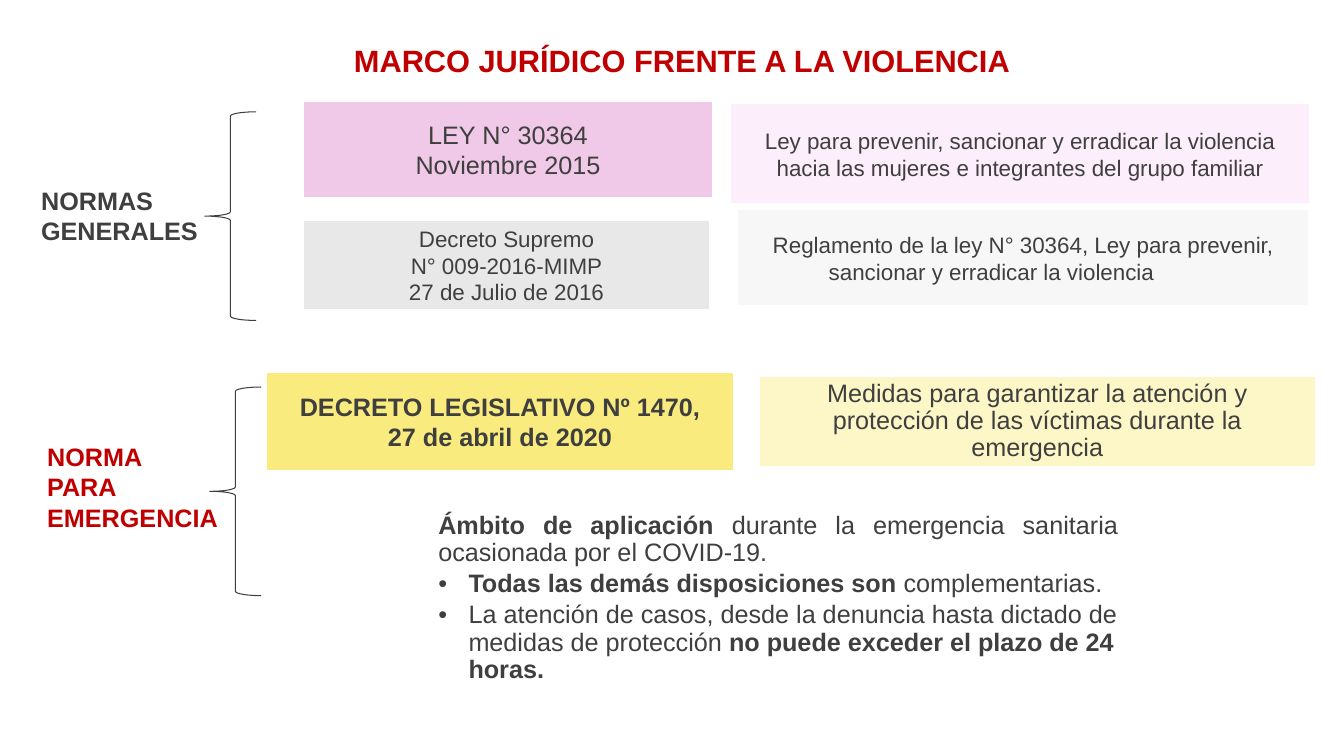
from lxml.etree import SubElement
from pptx import Presentation
from pptx.dml.color import RGBColor
from pptx.enum.shapes import MSO_SHAPE as Shape
from pptx.enum.text import MSO_ANCHOR as Anchor, MSO_AUTO_SIZE as AutoSize, PP_ALIGN as Align
from pptx.oxml.ns import qn
from pptx.util import Pt

DARK, RED, WHITE = "3F3F3F", "C00000", "FFFFFF"


def color(value):
    """Turn a hex string into a colour."""
    return RGBColor.from_string(value)


def write(frame, paragraphs, size=18, ink=DARK, bold=False, align=Align.LEFT,
          spacing=1.0, after=0, margin=0, indent=0, bullet=None, start=True):
    """Write paragraphs, each a string or a list of (text, bold) spans."""
    for index, content in enumerate(paragraphs):
        first = start and index == 0
        para = frame.paragraphs[0] if first else frame.add_paragraph()
        para.alignment, para.line_spacing, para.space_after = align, spacing, Pt(after)
        layout = para._p.get_or_add_pPr()
        layout.set("marL", str(Pt(margin)))
        layout.set("indent", str(Pt(indent)))
        if bullet:
            SubElement(layout, qn("a:buFont")).set("typeface", "Arial")
            SubElement(layout, qn("a:buChar")).set("char", bullet)
        spans = [(content, bold)] if isinstance(content, str) else content
        for text, strong in spans:
            span = para.add_run()
            span.text = text
            font = span.font
            font.name, font.size, font.bold = "Arial", Pt(size), strong
            font.color.rgb = color(ink)


class LegalSlide:
    """Hold the style and the current slide."""

    def __init__(self, deck):
        """Add a blank page to the deck."""
        self.page = deck.slides.add_slide(deck.slide_layouts[6])

    def panel(self, place, fill, paragraphs, inset=5, anchor=Anchor.MIDDLE, **style):
        """Draw a filled rectangle with text."""
        box = self.page.shapes.add_shape(Shape.RECTANGLE, *map(Pt, place))
        box.shadow.inherit = False
        box.fill.solid()
        box.fill.fore_color.rgb = color(fill)
        box.line.color.rgb = color(WHITE)
        box.line.width = Pt(0.85)
        frame = box.text_frame
        frame.word_wrap = True
        frame.vertical_anchor = anchor
        frame.margin_left = frame.margin_right = Pt(inset)
        frame.margin_top = frame.margin_bottom = Pt(min(inset, 4))
        write(frame, paragraphs, **{"align": Align.CENTER, **style})

    def label(self, place, paragraphs, wrap=False, **style):
        """Add a text box and return its frame."""
        frame = self.page.shapes.add_textbox(*map(Pt, place)).text_frame
        frame.word_wrap = wrap
        frame.auto_size = AutoSize.SHAPE_TO_FIT_TEXT
        write(frame, paragraphs, **style)
        return frame

    def brace(self, left, top):
        """Draw a left brace."""
        brace = self.page.shapes.add_shape(
            Shape.LEFT_BRACE, Pt(left), Pt(top), Pt(36.7), Pt(149))
        brace.shadow.inherit = False
        brace.fill.background()
        brace.line.color.rgb = color(DARK)
        brace.line.width = Pt(0.75)


def main():
    """Build the slide and save it."""
    deck = Presentation()
    deck.slide_width, deck.slide_height = Pt(960), Pt(540)
    slide = LegalSlide(deck)

    slide.panel((128.9, 28.8, 716.4, 43.9), WHITE, ["MARCO JURÍDICO FRENTE A LA VIOLENCIA"],
                inset=7.2, anchor=Anchor.TOP, size=22, ink=RED, bold=True, spacing=0.9)

    slide.panel((216.7, 72.7, 292.3, 68.4), "EFC9E7", ["LEY N° 30364", "Noviembre 2015"])
    slide.panel((522, 74.2, 413.3, 71.3), "FCEEFA",
                ["Ley para prevenir, sancionar y erradicar la violencia hacia las mujeres "
                 "e integrantes del grupo familiar"], size=16)
    slide.panel((216.7, 157.7, 290.2, 63.4), "E8E8E8",
                ["Decreto Supremo", "N° 009-2016-MIMP", "27 de Julio de 2016"], size=16)
    slide.panel((527, 149.8, 407.5, 68.4), "F7F7F7",
                ["Reglamento de la ley N° 30364, Ley para prevenir, "
                 "sancionar y erradicar la violencia"],
                size=16, align=Align.LEFT, margin=60, indent=-40)
    slide.label((22.3, 128.9, 127.4, 51.1), ["NORMAS", "GENERALES"], bold=True)
    slide.brace(146.2, 79.9)

    slide.panel((190.1, 265.7, 334.1, 70.6), "FAEB7E",
                ["DECRETO LEGISLATIVO Nº 1470,", "27 de abril de 2020"], bold=True)
    slide.panel((542.2, 268.6, 397.4, 64.8), "FDF7C7",
                ["Medidas para garantizar la atención y protección de las víctimas "
                 "durante la emergencia"], spacing=0.9)
    slide.label((26.6, 311.8, 137.5, 72.7), ["NORMA", "PARA", "EMERGENCIA"],
                ink=RED, bold=True)
    slide.brace(149.8, 276.5)

    scope = slide.label(
        (292.3, 362.9, 513.4, 131.8),
        [[("Ámbito de aplicación ", True),
          ("durante la emergencia sanitaria ocasionada por el COVID-19.", False)]],
        wrap=True, align=Align.JUSTIFY, spacing=0.9, after=2.7, margin=13.7)
    write(scope,
          [[("Todas las demás disposiciones son ", True), ("complementarias.", False)],
           [("La atención de casos, desde la denuncia hasta dictado de medidas "
             "de protección ", False),
            ("no puede exceder el plazo de 24 horas.", True)]],
          spacing=0.9, after=2.7, margin=35.3, indent=-21.6, bullet="•", start=False)

    deck.save("out.pptx")


if __name__ == "__main__":
    main()
